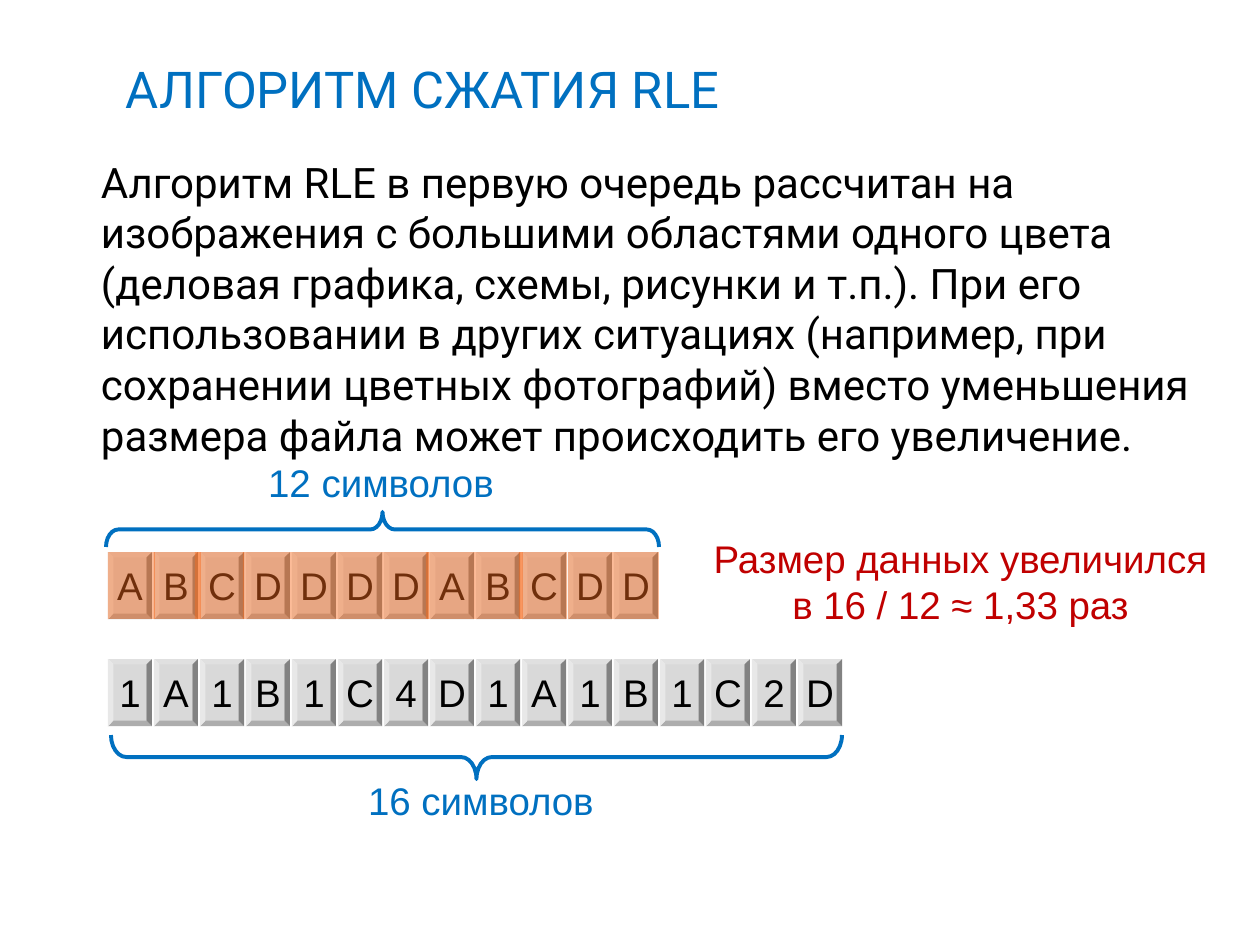
from itertools import groupby

from lxml import etree
from pptx import Presentation
from pptx.dml.color import RGBColor
from pptx.enum.shapes import MSO_SHAPE
from pptx.enum.text import MSO_ANCHOR, PP_ALIGN
from pptx.oxml.ns import qn
from pptx.util import Emu, Pt

BEVEL, BRACE, RECT = MSO_SHAPE.BEVEL, MSO_SHAPE.LEFT_BRACE, MSO_SHAPE.RECTANGLE
TOP, MIDDLE, BOTTOM = MSO_ANCHOR.TOP, MSO_ANCHOR.MIDDLE, MSO_ANCHOR.BOTTOM
LEFT, CENTER = PP_ALIGN.LEFT, PP_ALIGN.CENTER
BLUE, RED, BLACK, GRAY, ORANGE = "0070C0", "C00000", "000000", "D9D9D9", "F96A1B"

SYMBOLS = "ABCDDDDABCDD"
ENCODED = "".join(f"{len(list(run))}{symbol}" for symbol, run in groupby(SYMBOLS))
ROW_X, PITCH, TILE_W, TILE_H = 108, 46, 44, 67
SYMBOLS_Y, ENCODED_Y = 552, 659
HIGHLIGHTS = [(108, 47), (154, 47), (195, 49), (243, 186),
              (426, 49), (475, 48), (519, 48), (568, 91)]
BODY = ("Алгоритм RLE в первую очередь рассчитан на изображения с большими "
        "областями одного цвета (деловая графика, схемы, рисунки и т.п.). "
        "При его использовании в других ситуациях (например, при сохранении "
        "цветных фотографий) вместо уменьшения размера файла может "
        "происходить его увеличение.")


def px(n):
    return Emu(round(n * 914400 / 126))


def rgb(color):
    return RGBColor.from_string(color)


class SlideBuilder:
    """Draws the elements of one slide in a shared style."""

    def __init__(self, slide):
        self.slide = slide
        self.heading_font = "Roboto"
        self.label_font = "Arial"
        self.label_size = 22

    def fill_text(self, s, text, size, font, color, align, anchor, inset_x, inset_y):
        tf = s.text_frame
        tf.word_wrap = True
        tf.vertical_anchor = anchor
        tf.margin_left = tf.margin_right = px(inset_x)
        tf.margin_top = tf.margin_bottom = px(inset_y)
        p = tf.paragraphs[0]
        p.text = text
        p.alignment = align
        p.font.size = Pt(size)
        p.font.name = font
        p.font.color.rgb = rgb(color)
        return p

    def text(self, x, y, w, h, text, size, color, anchor):
        s = self.slide.shapes.add_textbox(px(x), px(y), px(w), px(h))
        return self.fill_text(s, text, size, self.heading_font, color, LEFT, anchor, 13, 6)

    def label(self, x, y, w, h, text, color):
        s = self.slide.shapes.add_textbox(px(x), px(y), px(w), px(h))
        self.fill_text(s, text, self.label_size, self.label_font, color, CENTER, BOTTOM, 0, 6)

    def shape(self, kind, x, y, w, h, fill):
        s = self.slide.shapes.add_shape(kind, px(x), px(y), px(w), px(h))
        s.shadow.inherit = False
        s.fill.solid()
        s.fill.fore_color.rgb = rgb(fill)
        s.line.fill.background()
        return s

    def tiles(self, x, y, symbols):
        for i, symbol in enumerate(symbols):
            s = self.shape(BEVEL, x + i * PITCH, y, TILE_W, TILE_H, GRAY)
            self.fill_text(s, symbol, self.label_size, self.label_font, BLACK,
                           CENTER, MIDDLE, 0, 0)

    def highlight(self, x, y, w, h):
        s = self.shape(RECT, x, y, w, h, ORANGE)
        color = s._element.spPr.find(".//" + qn("a:srgbClr"))
        etree.SubElement(color, qn("a:alpha")).set("val", "45000")

    def brace(self, x, y, length, depth, rotation):
        shift = (length - depth) / 2
        s = self.shape(BRACE, x + shift, y - shift, depth, length, GRAY)
        s.fill.background()
        s.line.color.rgb = rgb(BLUE)
        s.line.width = Pt(2.25)
        s.adjustments[0] = 0.35
        s.rotation = rotation


def main():
    prs = Presentation()
    prs.slide_width, prs.slide_height = px(1260), px(945)
    b = SlideBuilder(prs.slides.add_slide(prs.slide_layouts[6]))

    b.text(113, 50, 1036, 76, "АЛГОРИТМ СЖАТИЯ RLE", 29, BLUE, MIDDLE)
    p = b.text(88, 150, 1131, 364, BODY, 24, BLACK, TOP)
    p.line_spacing = Pt(28.9)

    b.brace(111, 735, 731, 44, 270)
    b.label(323, 780, 316, 49, f"{len(ENCODED)} символов", BLUE)
    b.label(687, 538, 547, 95, "Размер данных увеличился\vв 16 / 12 ≈ 1,33 раз", RED)
    b.brace(106, 512, 553, 35, 90)
    b.label(233, 462, 296, 49, f"{len(SYMBOLS)} символов", BLUE)

    b.tiles(ROW_X, SYMBOLS_Y, SYMBOLS)
    b.tiles(ROW_X, ENCODED_Y, ENCODED)
    for x, w in HIGHLIGHTS:
        b.highlight(x, SYMBOLS_Y, w, TILE_H)

    prs.save("out.pptx")


if __name__ == "__main__":
    main()
